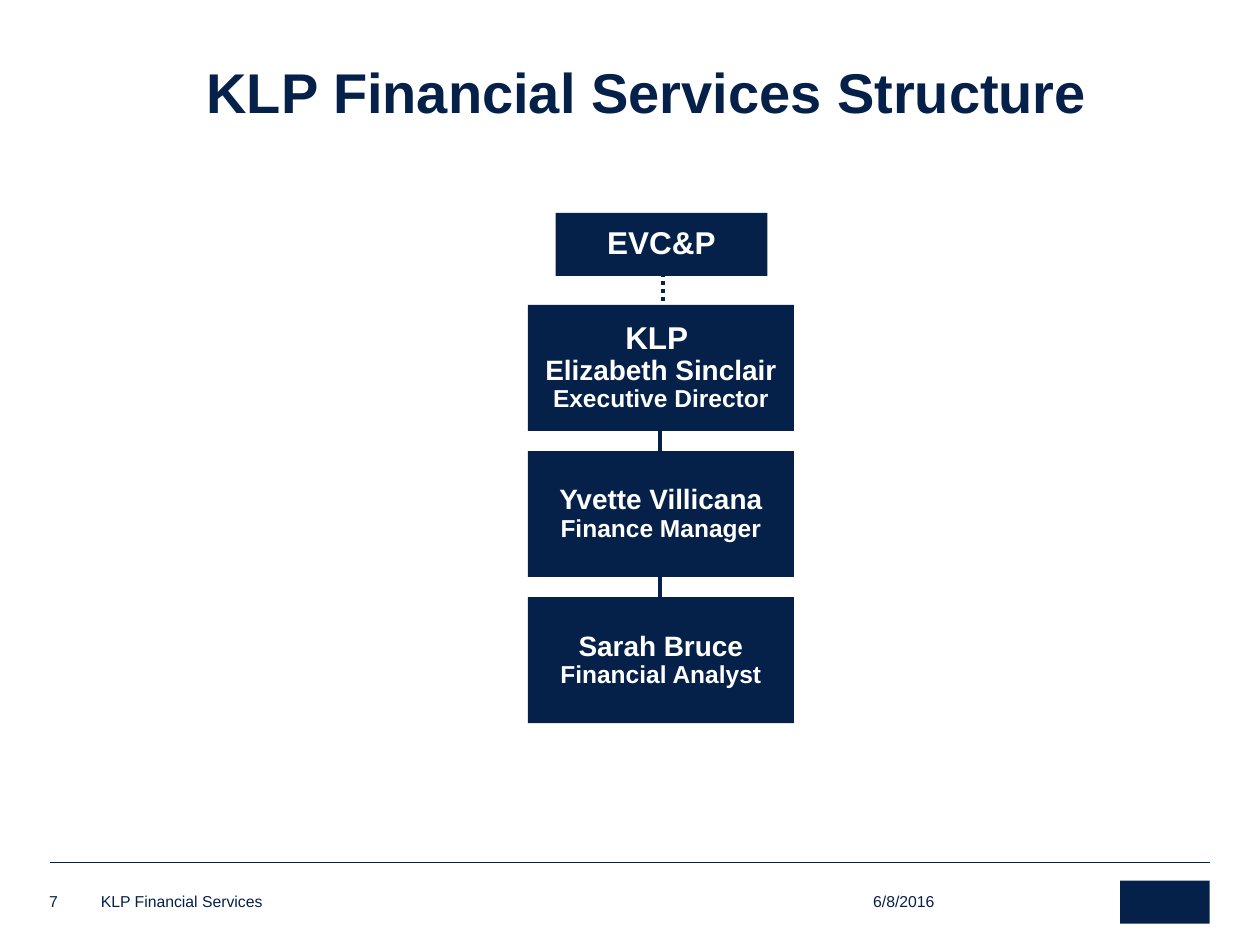
from dataclasses import dataclass

from lxml.etree import SubElement
from pptx import Presentation
from pptx.dml.color import RGBColor
from pptx.enum.dml import MSO_LINE
from pptx.enum.shapes import MSO_CONNECTOR, MSO_SHAPE
from pptx.enum.text import MSO_ANCHOR, PP_ALIGN
from pptx.oxml.ns import qn
from pptx.util import Inches, Pt


@dataclass(frozen=True)
class Theme:
    font: str = "Arial"
    navy: RGBColor = RGBColor(0x05, 0x20, 0x49)
    white: RGBColor = RGBColor(0xFF, 0xFF, 0xFF)
    title_size: int = 32
    unit_size: int = 18
    name_size: int = 16
    role_size: int = 14
    footer_size: int = 9
    connector_width: float = 2.25
    rule_width: float = 0.25


THEME = Theme()


def add_run(paragraph, text, size, color, bold=False):
    run = paragraph.add_run()
    run.text = text
    run.font.name = THEME.font
    run.font.size = Pt(size)
    run.font.bold = bold
    run.font.color.rgb = color


def place(shape, left, top, width, height):
    shape.left, shape.top = Inches(left), Inches(top)
    shape.width, shape.height = Inches(width), Inches(height)


def add_title(slide, text):
    title = slide.shapes.title
    place(title, 0.71, 0.48, 8.85, 0.57)
    title.text_frame.vertical_anchor = MSO_ANCHOR.MIDDLE
    paragraph = title.text_frame.paragraphs[0]
    paragraph.alignment = PP_ALIGN.CENTER
    paragraph.line_spacing = 0.85
    add_run(paragraph, text, THEME.title_size, THEME.navy, bold=True)


def add_block(slide, left, top, width, height):
    block = slide.shapes.add_shape(
        MSO_SHAPE.RECTANGLE, Inches(left), Inches(top), Inches(width), Inches(height)
    )
    block.shadow.inherit = False
    block.fill.solid()
    block.fill.fore_color.rgb = THEME.navy
    block.line.fill.background()
    return block


def add_position(slide, left, top, width, height, lines):
    frame = add_block(slide, left, top, width, height).text_frame
    frame.word_wrap = False
    frame.vertical_anchor = MSO_ANCHOR.MIDDLE
    for index, (text, size) in enumerate(lines):
        paragraph = frame.add_paragraph() if index else frame.paragraphs[0]
        paragraph.alignment = PP_ALIGN.CENTER
        paragraph.line_spacing = 0.9
        add_run(paragraph, text, size, THEME.white, bold=True)


def add_line(slide, start, end, width, dash=None):
    line = slide.shapes.add_connector(
        MSO_CONNECTOR.STRAIGHT, *(Inches(value) for value in (*start, *end))
    )
    line.line.color.rgb = THEME.navy
    line.line.width = Pt(width)
    if dash is not None:
        line.line.dash_style = dash
    SubElement(line._element.spPr, qn("a:effectLst"))


def add_footer_text(slide, text, left, top, width, height):
    box = slide.shapes.add_textbox(
        Inches(left), Inches(top), Inches(width), Inches(height)
    )
    frame = box.text_frame
    frame.word_wrap = True
    frame.vertical_anchor = MSO_ANCHOR.BOTTOM
    frame.margin_left = frame.margin_right = 0
    frame.margin_top = frame.margin_bottom = 0
    add_run(frame.paragraphs[0], text, THEME.footer_size, THEME.navy)


def add_footer(slide):
    add_line(slide, (0.4, 6.84), (9.6, 6.84), THEME.rule_width)
    add_block(slide, 8.89, 6.99, 0.71, 0.34)
    add_footer_text(slide, "6/8/2016", 6.93, 7.06, 1.01, 0.17)
    add_footer_text(slide, "KLP Financial Services", 0.8, 7.08, 4.71, 0.15)
    add_footer_text(slide, "7", 0.39, 7.06, 0.27, 0.17)


def add_organization_chart(slide):
    left, first_top, width, height, gap = 4.19, 2.42, 2.11, 1, 0.16
    center = 5.24
    positions = [
        [
            ("KLP ", THEME.unit_size),
            ("Elizabeth Sinclair", THEME.name_size),
            ("Executive Director", THEME.role_size),
        ],
        [("Yvette Villicana", THEME.name_size), ("Finance Manager", THEME.role_size)],
        [("Sarah Bruce", THEME.name_size), ("Financial Analyst", THEME.role_size)],
    ]
    add_position(slide, 4.41, 1.69, 1.68, 0.5, [("EVC&P", THEME.unit_size)])
    add_line(
        slide, (5.26, 2.17), (5.26, 2.59), THEME.connector_width, MSO_LINE.ROUND_DOT
    )
    for index, lines in enumerate(positions):
        top = first_top + index * (height + gap)
        add_position(slide, left, top, width, height, lines)
        if index:
            add_line(slide, (center, top - gap), (center, top), THEME.connector_width)


def main():
    presentation = Presentation()
    presentation.slide_width = Inches(10)
    presentation.slide_height = Inches(7.5)
    slide = presentation.slides.add_slide(presentation.slide_layouts[5])
    add_footer(slide)
    add_title(slide, "KLP Financial Services Structure")
    add_organization_chart(slide)
    presentation.save("out.pptx")


if __name__ == "__main__":
    main()
